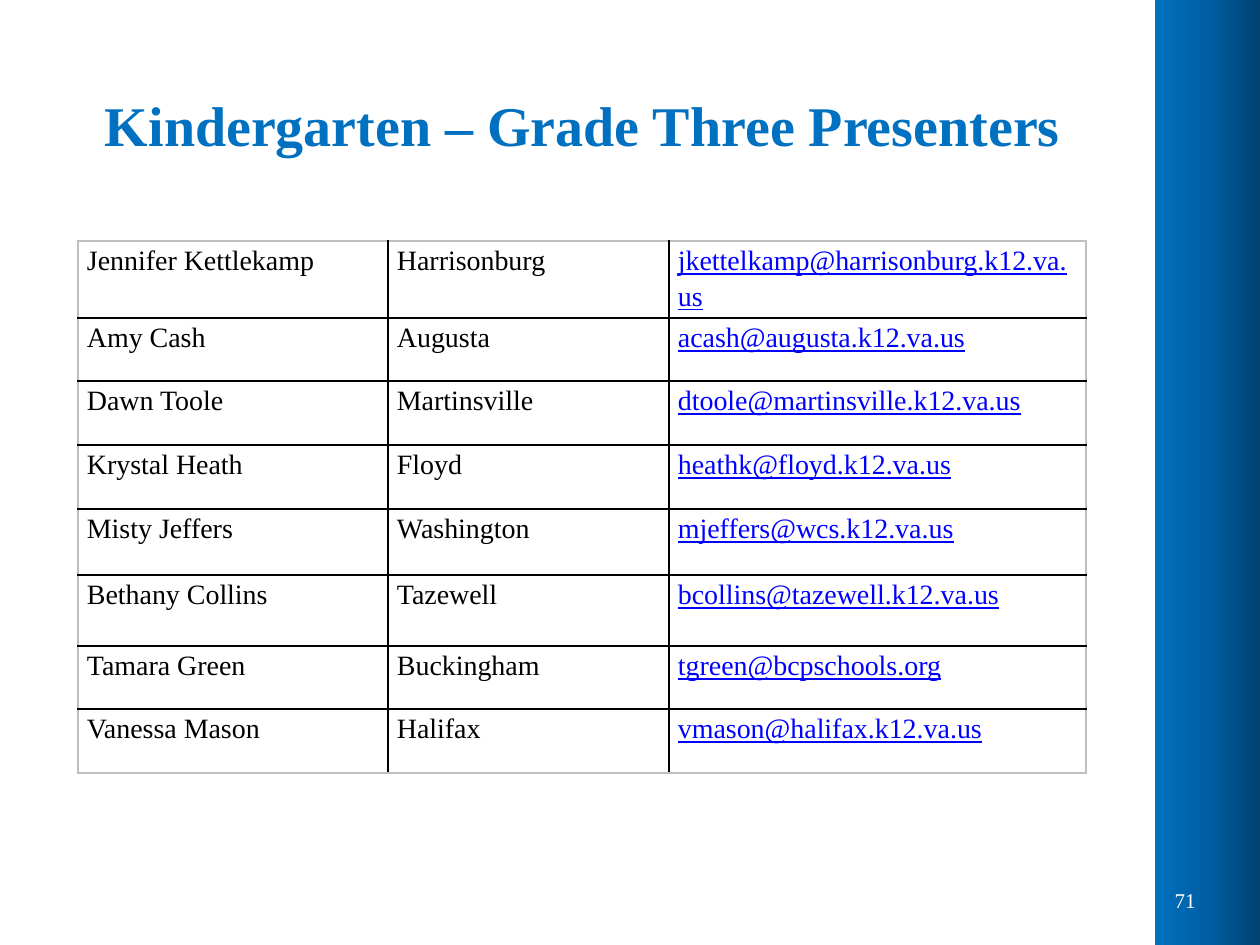
"""Build the slide that lists the Kindergarten to Grade Three presenters."""

from copy import deepcopy
from typing import NamedTuple

from lxml.etree import SubElement
from pptx import Presentation
from pptx.dml.color import RGBColor
from pptx.enum.shapes import MSO_SHAPE as Shape
from pptx.enum.text import MSO_ANCHOR as Anchor, MSO_AUTO_SIZE as Fit, PP_ALIGN as Align
from pptx.oxml.ns import qn
from pptx.util import Emu, Pt

SCALE = 914400 / 126
FONT = "Times New Roman"
BLUE = RGBColor(0x00, 0x70, 0xC0)
MID = RGBColor(0x00, 0x5E, 0xA2)
NAVY = RGBColor(0x00, 0x42, 0x72)
BLACK = RGBColor(0x00, 0x00, 0x00)
WHITE = RGBColor(0xFF, 0xFF, 0xFF)
GRAY = RGBColor(0xBF, 0xBF, 0xBF)
LINK = RGBColor(0x00, 0x00, 0xFF)


class Person(NamedTuple):
    name: str
    place: str
    email: str


PEOPLE = [
    Person("Jennifer Kettlekamp", "Harrisonburg", "jkettelkamp@harrisonburg.k12.va.us"),
    Person("Amy Cash", "Augusta", "acash@augusta.k12.va.us"),
    Person("Dawn Toole", "Martinsville", "dtoole@martinsville.k12.va.us"),
    Person("Krystal Heath", "Floyd", "heathk@floyd.k12.va.us"),
    Person("Misty Jeffers", "Washington", "mjeffers@wcs.k12.va.us"),
    Person("Bethany Collins", "Tazewell", "bcollins@tazewell.k12.va.us"),
    Person("Tamara Green", "Buckingham", "tgreen@bcpschools.org"),
    Person("Vanessa Mason", "Halifax", "vmason@halifax.k12.va.us"),
]
COLS = [310, 281, 417]
ROWS = [64, 63, 64, 64, 66, 71, 63, 64]


def px(n: int) -> Emu:
    """Turn pixels into EMU."""
    return Emu(round(n * SCALE))


def write(frame, text: str, size: int, color: RGBColor, align=Align.LEFT):
    """Fill a text frame with one styled line and return its paragraph."""
    frame.text = text
    line = frame.paragraphs[0]
    line.alignment = align
    font = line.runs[0].font
    font.name, font.size, font.color.rgb = FONT, Pt(size), color
    return line


def add_bar(slide) -> None:
    """Draw the shaded bar on the right."""
    bar = slide.shapes.add_shape(Shape.RECTANGLE, px(1155), 0, px(105), px(945))
    bar.shadow.inherit = False
    bar.line.fill.background()
    bar.fill.gradient()
    bar.fill.gradient_angle = 0
    stops = bar._element.spPr.find(qn("a:gradFill")).find(qn("a:gsLst"))
    stops.insert(1, deepcopy(stops[0]))
    for i, (stop, color) in enumerate(zip(bar.fill.gradient_stops, (BLUE, MID, NAVY))):
        stop.position, stop.color.rgb = i / 2, color


def add_title(slide) -> None:
    """Place the title."""
    title = slide.shapes.title
    title.left, title.top, title.width, title.height = map(px, (63, 84, 1040, 158))
    frame = title.text_frame
    frame.auto_size, frame.vertical_anchor = Fit.NONE, Anchor.TOP
    line = write(frame, "Kindergarten – Grade Three Presenters", 32, BLUE, Align.CENTER)
    line.runs[0].font.bold = True


def add_page(slide) -> None:
    """Place the page number on the bar."""
    box = slide.shapes.add_textbox(*map(px, (1155, 876, 53, 48)))
    box.text_frame.word_wrap = True
    box.text_frame.vertical_anchor = Anchor.MIDDLE
    write(box.text_frame, "71", 12, WHITE, Align.RIGHT)


def set_edges(cell, row: int, col: int) -> None:
    """Rule a cell, gray on the rim of the table and black inside."""
    rim = {"L": col == 0, "R": col == len(COLS) - 1, "T": row == 0, "B": row == len(ROWS) - 1}
    props = cell._tc.get_or_add_tcPr()
    for i, (side, outer) in enumerate(rim.items()):
        edge = SubElement(props, qn(f"a:ln{side}"), w=str(Pt(1)))
        fill = SubElement(edge, qn("a:solidFill"))
        SubElement(fill, qn("a:srgbClr"), val=str(GRAY if outer else BLACK))
        props.insert(i, edge)


def add_list(slide) -> None:
    """Draw the table of presenters."""
    area = map(px, (78, 241, sum(COLS), sum(ROWS)))
    table = slide.shapes.add_table(len(ROWS), len(COLS), *area).table
    table.first_row = table.horz_banding = False
    for col, width in zip(table.columns, COLS):
        col.width = px(width)
    for r, (person, height) in enumerate(zip(PEOPLE, ROWS)):
        table.rows[r].height = px(height)
        for c, text in enumerate(person):
            cell = table.cell(r, c)
            cell.margin_left = cell.margin_right = px(9)
            cell.margin_top = cell.margin_bottom = 0
            cell.fill.background()
            set_edges(cell, r, c)
            mail = c == 2
            line = write(cell.text_frame, text, 16, LINK if mail else BLACK)
            line.line_spacing = 1.15
            line.runs[0].font.underline = mail


def main() -> None:
    """Build and save the slide."""
    deck = Presentation()
    deck.slide_width, deck.slide_height = px(1260), px(945)
    slide = deck.slides.add_slide(deck.slide_layouts[5])
    add_bar(slide)
    add_page(slide)
    add_title(slide)
    add_list(slide)
    deck.save("out.pptx")


if __name__ == "__main__":
    main()
